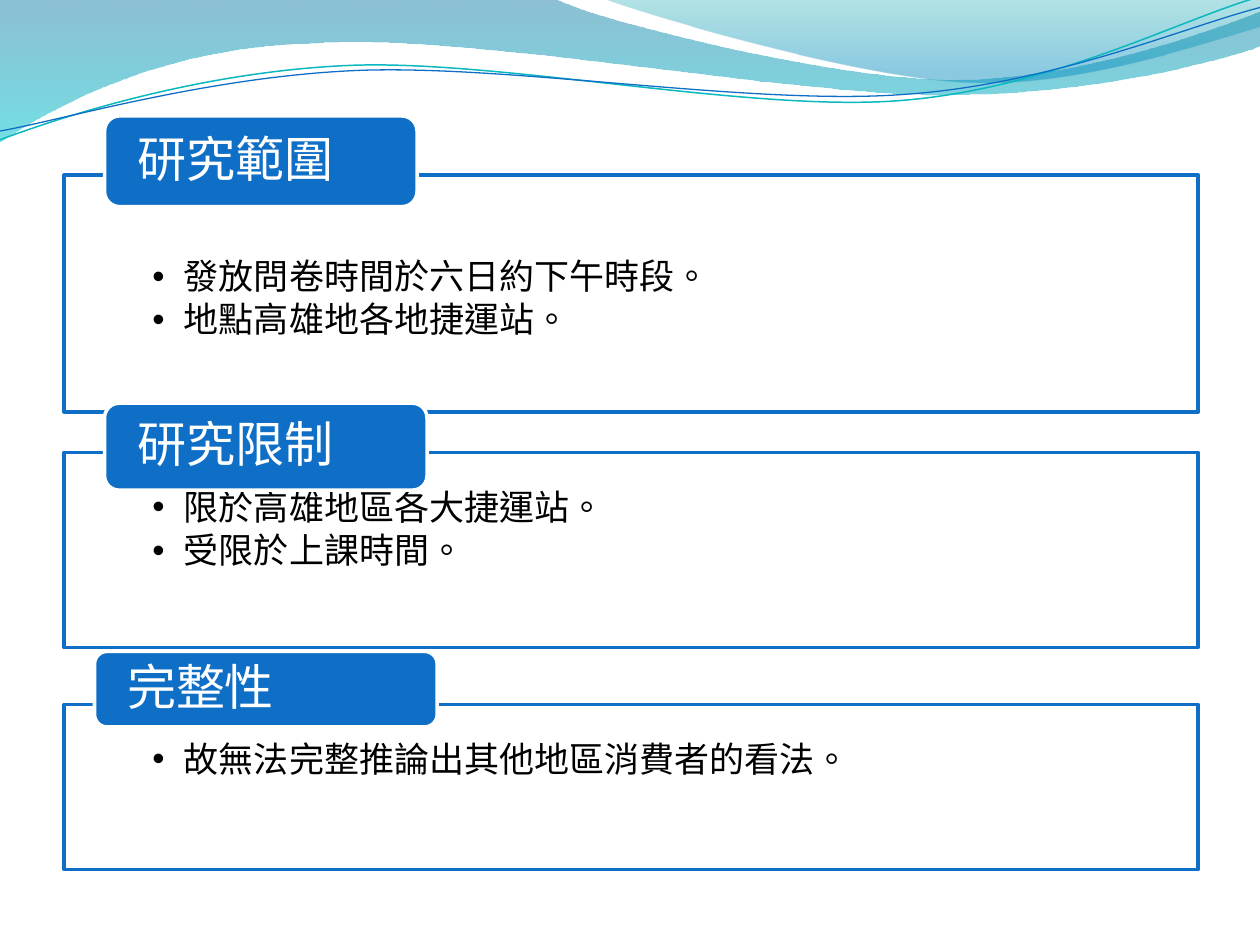
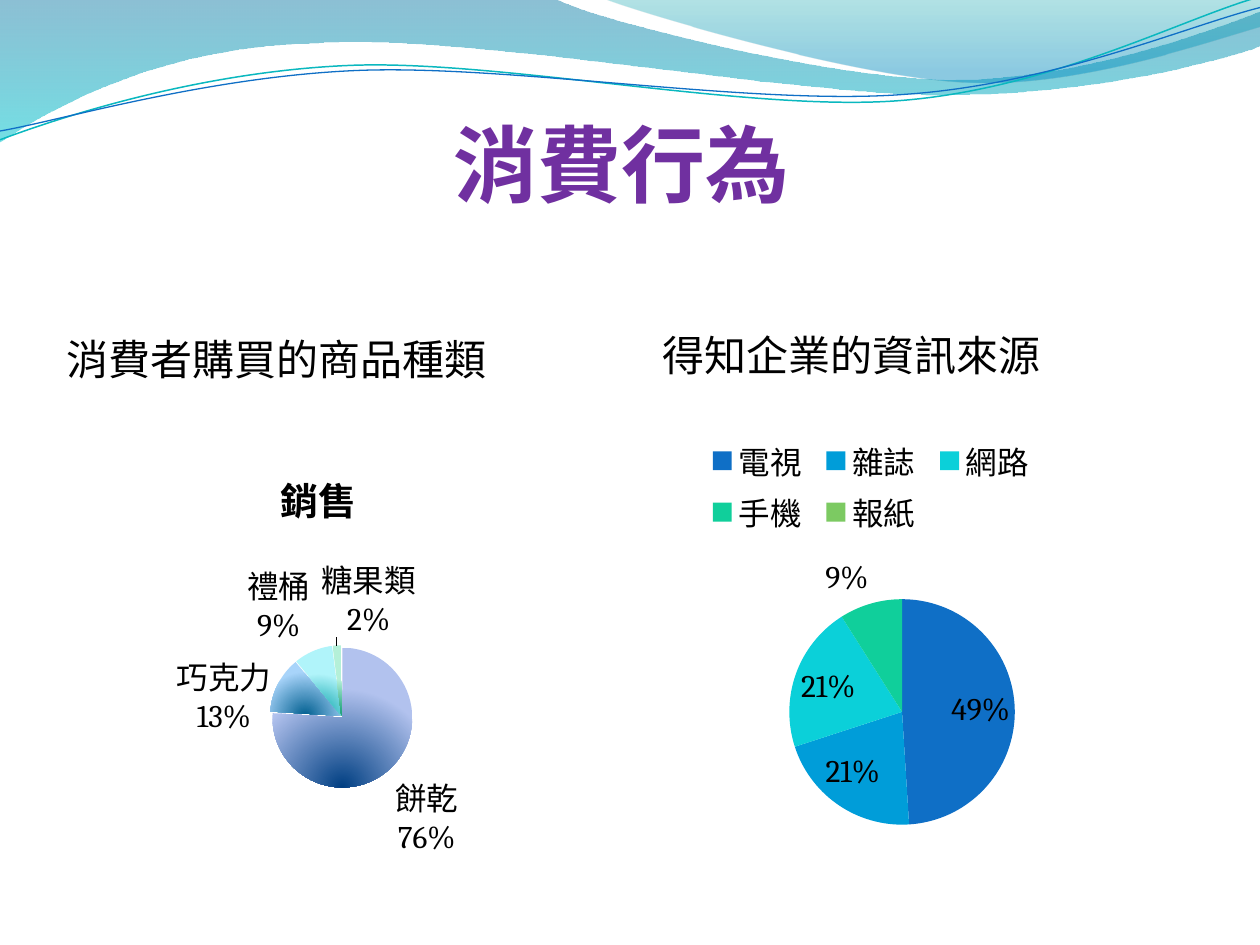
import pptx
import pptx.util
import pptx.chart.data
from pptx.dml.color import RGBColor
from pptx.enum.chart import XL_CHART_TYPE, XL_LABEL_POSITION, XL_LEGEND_POSITION
from pptx.enum.lang import MSO_LANGUAGE_ID
from pptx.enum.shapes import MSO_SHAPE
from pptx.enum.text import MSO_ANCHOR, PP_ALIGN
from pptx.oxml import parse_xml
from pptx.oxml.ns import nsdecls, qn
from pptx.util import Inches

# Shared look
BLUE, WHITE, BLACK, PURPLE = "0F6FC6", "FFFFFF", "000000", "7030A0"
SLICES = [BLUE, "009DD9", "0BD0D9", "10CF9B", "7CCA62"]
GLOWS = [("003F82", "B2C2EE"), ("005F90", "A8D4FA"),
         ("00A0A8", "B0F4FA"), ("0A9A70", "B4F0D8")]
BODY, HEAD = "Cambria", "Calibri"

# Wave outlines: start point, then curves (six numbers) or lines (two)
BAND = [(0, 0), (4.4, -0.01),
        (4.76, 0.17, 6.64, 0.63, 7.58, 0.63), (8.53, 0.63, 9.58, 0.26, 10, 0.09),
        (10.01, 0.36),
        (9.83, 0.44, 8.7, 0.76, 7.46, 0.75), (6.22, 0.75, 3.82, 0.28, 2.57, 0.34),
        (1.29, 0.36, 0.46, 0.83, -0.01, 1.13)]
CREST = [(4.79, -0.01),
         (5.09, 0.11, 6.82, 0.62, 7.69, 0.65), (8.56, 0.69, 9.61, 0.32, 10, 0.21),
         (10, 0)]
TEAL = [(0, 1.11), (0.48, 0.93, 1.58, 0.57, 2.77, 0.52),
        (3.95, 0.47, 5.93, 0.89, 7.13, 0.8), (8.33, 0.71, 9.38, 0.15, 9.98, -0.02)]
NAVY = [(0, 1.04), (0.47, 0.96, 1.64, 0.61, 2.83, 0.56),
        (4.03, 0.51, 5.97, 0.84, 7.17, 0.75), (8.36, 0.67, 9.41, 0.21, 10, 0.06)]


def color(code):
    return RGBColor.from_string(code)


def write(frame, lines, size=20, font=BODY, ink=BLACK, bold=False, align=PP_ALIGN.LEFT,
          anchor=MSO_ANCHOR.TOP, inset=(0.1, 0.05, 0.1, 0.05), space=1.0, after=0,
          bullet=False):
    """Fill a text frame, one paragraph for each line."""
    frame.word_wrap = True
    frame.vertical_anchor = anchor
    (frame.margin_left, frame.margin_top,
     frame.margin_right, frame.margin_bottom) = map(Inches, inset)
    for num, line in enumerate(lines):
        para = frame.add_paragraph() if num else frame.paragraphs[0]
        para.alignment, para.line_spacing = align, space
        para.space_after = pptx.util.Pt(after)
        run = para.add_run()
        run.text = line
        run.font.size, run.font.name = pptx.util.Pt(size), font
        run.font.bold, run.font.color.rgb = bold, color(ink)
        run.font.language_id = MSO_LANGUAGE_ID.TRADITIONAL_CHINESE
        if bullet:
            props = para._p.get_or_add_pPr()
            props.set("marL", str(Inches(0.25)))
            props.set("indent", str(Inches(-0.25)))
            props.append(parse_xml(f'<a:buFont {nsdecls("a")} typeface="Arial"/>'))
            props.append(parse_xml(f'<a:buChar {nsdecls("a")} char="•"/>'))


def label(slide, text, box, **fmt):
    frame = slide.shapes.add_textbox(*map(Inches, box)).text_frame
    write(frame, [text], **fmt)


def panel(slide, kind, box, fill, line):
    shape = slide.shapes.add_shape(kind, *map(Inches, box))
    shape.shadow.inherit = False
    shape.fill.solid()
    shape.fill.fore_color.rgb = color(fill)
    shape.line.color.rgb = color(line)
    shape.line.width = pptx.util.Pt(2)
    return shape


# Waves
def blend(fill, *stops):
    """Two-stop gradient from (position, colour, opacity) triples, top to bottom."""
    fill.gradient()
    fill.gradient_angle = 270
    for stop, (place, code, alpha) in zip(fill.gradient_stops, stops):
        stop.position = place
        stop.color.rgb = color(code)
        if alpha < 100:
            tint = stop._gs.find(qn("a:srgbClr"))
            tint.append(parse_xml(f'<a:alpha {nsdecls("a")} val="{alpha * 1000}"/>'))


def bend(shape, nodes):
    """Join each three segments that stand for a curve into one cubic curve."""
    lines = iter(list(shape._element.iter(qn("a:lnTo"))))
    for node in nodes[1:]:
        first = next(lines)
        if len(node) == 6:
            curve = parse_xml(f'<a:cubicBezTo {nsdecls("a")}/>')
            first.addprevious(curve)
            for part in (first, next(lines), next(lines)):
                curve.append(part[0])
                part.getparent().remove(part)


def wave(slide, nodes, stops=None, line=None, width=0.75):
    points = [tuple(map(Inches, node[at:at + 2]))
              for node in nodes for at in range(0, len(node), 2)]
    form = slide.shapes.build_freeform(*points[0])
    form.add_line_segments(points[1:], close=bool(stops))
    shape = form.convert_to_shape()
    bend(shape, nodes)
    shape.shadow.inherit = False
    if stops:
        blend(shape.fill, *stops)
        shape.line.fill.background()
    else:
        shape.fill.background()
        shape.line.color.rgb = color(line)
        shape.line.width = pptx.util.Pt(width)


def start(deck):
    """Add a blank slide with the waves on top."""
    slide = deck.slides.add_slide(deck.slide_layouts[6])
    wave(slide, BAND, stops=[(0, "0074A1", 45), (1, "00C6CF", 55)])
    wave(slide, CREST, stops=[(0, "00A1A9", 30), (0.8, "008BBF", 45)])
    wave(slide, TEAL, line="0AB8BF", width=0.85)
    wave(slide, NAVY, line=BLUE)
    return slide


# Scope boxes
def topic(slide, title, lines, top, height, tab, inset=0.3):
    box = panel(slide, MSO_SHAPE.RECTANGLE, (0.51, top, 9, height), WHITE, BLUE)
    write(box.text_frame, lines, inset=(0.7, inset, 0.7, 0.16), space=0.9, after=3,
          bullet=True)
    head = panel(slide, MSO_SHAPE.ROUNDED_RECTANGLE, tab, BLUE, WHITE)
    write(head.text_frame, [title], size=28, ink=WHITE, space=0.9,
          anchor=MSO_ANCHOR.MIDDLE, inset=(0.23, 0, 0.23, 0))


# Charts
def place(node, **spots):
    """Give a chart part a fixed place, in fractions of the chart."""
    for old in node.findall(qn("c:layout")):
        node.remove(old)
    modes = '<c:xMode val="edge"/><c:yMode val="edge"/>'
    if node.tag == qn("c:plotArea"):
        modes = '<c:layoutTarget val="inner"/>' + modes
    sizes = "".join(f'<c:{key} val="{val}"/>' for key, val in spots.items())
    layout = parse_xml(f'<c:layout {nsdecls("c")}><c:manualLayout>{modes}{sizes}'
                       '</c:manualLayout></c:layout>')
    cover = node.find(qn("c:overlay"))
    if cover is None:
        node.insert(0, layout)
    else:
        cover.addprevious(layout)


def pie(slide, box, name, cats, vals, area, names=False):
    data = pptx.chart.data.CategoryChartData()
    data.categories = cats
    data.add_series(name, vals)
    chart = slide.shapes.add_chart(XL_CHART_TYPE.PIE, *map(Inches, box), data).chart
    chart.has_title = chart.has_legend = False
    chart.font.size, chart.font.name = pptx.util.Pt(18), BODY
    chart.font.color.rgb = color(BLACK)
    plot = chart.plots[0]
    plot.vary_by_categories = True
    for num in range(len(cats)):
        fill = plot.series[0].points[num].format.fill
        fill.solid()
        fill.fore_color.rgb = color(SLICES[num])
    plot.has_data_labels = True
    tags = plot.data_labels
    tags.show_value, tags.show_percentage = False, True
    tags.show_category_name = names
    tags.number_format, tags.number_format_is_linked = "0%", False
    tags.position = XL_LABEL_POSITION.BEST_FIT
    place(chart._chartSpace.chart.plotArea, **area)
    return chart


def glow(chart):
    """Shade each slice from its lower middle and pull the slices apart."""
    series = chart.plots[0].series[0]
    for num, (dark, light) in enumerate(GLOWS):
        fill = series.points[num].format.fill
        blend(fill, (0, dark, 100), (1, light, 100))
        for lin in list(series._element.iter(qn("a:lin"))):
            lin.getparent().replace(lin, parse_xml(
                f'<a:path {nsdecls("a")} path="circle">'
                '<a:fillToRect l="50000" t="100000" r="50000"/></a:path>'))
    first = series._element.find(qn("c:dPt"))
    first.addprevious(parse_xml(f'<c:explosion {nsdecls("c")} val="2"/>'))
    leader = next(chart._chartSpace.iter(qn("c:showLeaderLines")), None)
    if leader is not None:
        leader.addprevious(parse_xml(f'<c:separator {nsdecls("c")}>\n</c:separator>'))


def scope(deck):
    slide = start(deck)
    topic(slide, "研究範圍", ["發放問卷時間於六日約下午時段。", "地點高雄地各地捷運站。"],
          1.39, 1.88, (0.83, 0.92, 2.48, 0.72), inset=0.67)
    topic(slide, "研究限制", ["限於高雄地區各大捷運站。", "受限於上課時間。"],
          3.59, 1.55, (0.83, 3.2, 2.56, 0.69))
    topic(slide, "完整性", ["故無法完整推論出其他地區消費者的看法。"],
          5.59, 1.31, (0.75, 5.17, 2.72, 0.6))


def habits(deck):
    slide = start(deck)
    label(slide, "消費行為", (0.43, 0.6, 9, 1.09), size=48, font=HEAD, ink=PURPLE,
          bold=True, align=PP_ALIGN.CENTER, anchor=MSO_ANCHOR.BOTTOM,
          inset=(0, 0.05, 0, 0))

    # Goods bought
    goods = pie(slide, (0.28, 3.51, 4.5, 3.43), "銷售",
                ["餅乾", "巧克力", "禮桶", "糖果類"], [76, 13, 9, 2],
                dict(x=0.41, y=0.47, w=0.26, h=0.33), names=True)
    glow(goods)
    goods.has_title = True
    write(goods.chart_title.text_frame, ["銷售"], size=21.6, bold=True)
    place(goods.chart_title._element, x=0.42, y=0.04)
    label(slide, "消費者購買的商品種類", (0.43, 2.6, 3.62, 0.5), size=24)

    # Where buyers heard of the firm
    media = pie(slide, (4.69, 3.36, 4.49, 3.58), "Series 1",
                ["電視", "雜誌", "網路", "手機", "報紙"], [49, 21, 21, 9, None],
                dict(x=0.35, y=0.39, w=0.4, h=0.5))
    media.has_legend = True
    media.legend.position = XL_LEGEND_POSITION.TOP
    media.legend.include_in_layout = False
    place(media.legend._element, x=0.19, y=0.02, w=0.61, h=0.24)
    label(slide, "得知企業的資訊來源", (5.16, 2.57, 3.94, 0.5), size=24)


def main():
    deck = pptx.Presentation()
    deck.slide_width, deck.slide_height = Inches(10), Inches(7.5)
    scope(deck)
    habits(deck)
    deck.save("out.pptx")


if __name__ == "__main__":
    main()
